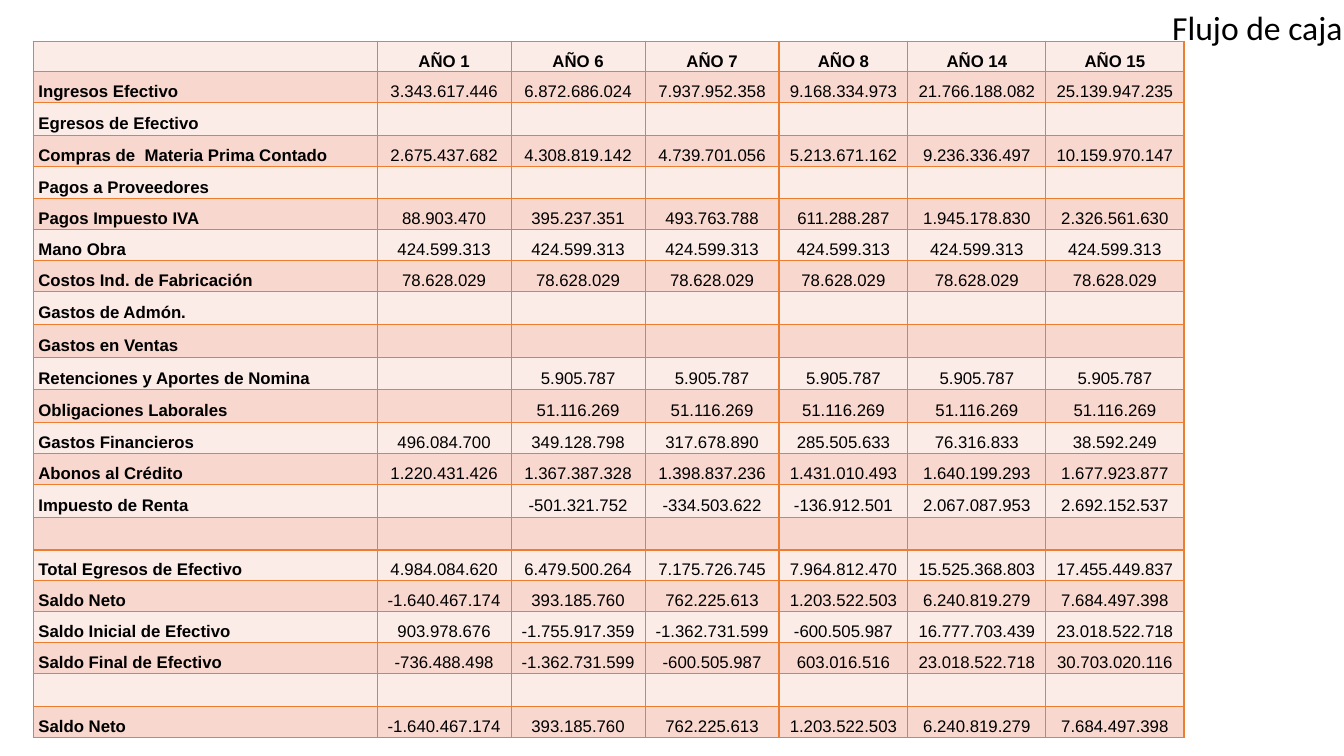
import pptx
import pptx.dml.color
import pptx.enum.text
import pptx.oxml
import pptx.oxml.ns
import pptx.util

Pt = pptx.util.Pt
ALIGN = pptx.enum.text.PP_ALIGN
MIDDLE = pptx.enum.text.MSO_ANCHOR.MIDDLE

BLACK, ORANGE = "000000", "ED7D31"
BANDS = ("FCECE8", "F8D7CE")
COLUMN_WIDTHS = (245.6, 95.7, 95.7, 95.7, 92, 98.6, 98.6)
HEADER_HEIGHT, FULL_ROW_HEIGHT, GAP_ROW_HEIGHT = 20.2, 22.1, 23.4
NO_VALUES = ("",) * 6
NET_BALANCE = ("Saldo Neto", "-1.640.467.174", "393.185.760", "762.225.613",
               "1.203.522.503", "6.240.819.279", "7.684.497.398")

CASH_FLOW = [
    ("", "AÑO 1", "AÑO 6", "AÑO 7", "AÑO 8", "AÑO 14", "AÑO 15"),
    ("Ingresos Efectivo", "3.343.617.446", "6.872.686.024", "7.937.952.358",
     "9.168.334.973", "21.766.188.082", "25.139.947.235"),
    ("Egresos de Efectivo", *NO_VALUES),
    ("Compras de  Materia Prima Contado", "2.675.437.682", "4.308.819.142", "4.739.701.056",
     "5.213.671.162", "9.236.336.497", "10.159.970.147"),
    ("Pagos a Proveedores", *NO_VALUES),
    ("Pagos Impuesto IVA", "88.903.470", "395.237.351", "493.763.788",
     "611.288.287", "1.945.178.830", "2.326.561.630"),
    ("Mano Obra", *["424.599.313"] * 6),
    ("Costos Ind. de Fabricación", *["78.628.029"] * 6),
    ("Gastos de Admón.", *NO_VALUES),
    ("Gastos en Ventas", *NO_VALUES),
    ("Retenciones y Aportes de Nomina", "", *["5.905.787"] * 5),
    ("Obligaciones Laborales", "", *["51.116.269"] * 5),
    ("Gastos Financieros", "496.084.700", "349.128.798", "317.678.890",
     "285.505.633", "76.316.833", "38.592.249"),
    ("Abonos al Crédito", "1.220.431.426", "1.367.387.328", "1.398.837.236",
     "1.431.010.493", "1.640.199.293", "1.677.923.877"),
    ("Impuesto de Renta", "", "-501.321.752", "-334.503.622",
     "-136.912.501", "2.067.087.953", "2.692.152.537"),
    ("", *NO_VALUES),
    ("Total Egresos de Efectivo", "4.984.084.620", "6.479.500.264", "7.175.726.745",
     "7.964.812.470", "15.525.368.803", "17.455.449.837"),
    NET_BALANCE,
    ("Saldo Inicial de Efectivo", "903.978.676", "-1.755.917.359", "-1.362.731.599",
     "-600.505.987", "16.777.703.439", "23.018.522.718"),
    ("Saldo Final de Efectivo", "-736.488.498", "-1.362.731.599", "-600.505.987",
     "603.016.516", "23.018.522.718", "30.703.020.116"),
    ("", *NO_VALUES),
    NET_BALANCE,
]


def color(value):
    """Return the colour for a hex string."""
    return pptx.dml.color.RGBColor.from_string(value)


def add_run(paragraph, text, font_name, size, bold=False):
    """Append a run of black text to a paragraph."""
    run = paragraph.add_run()
    run.text = text
    run.font.name = font_name
    run.font.size = Pt(size)
    run.font.bold = bold
    run.font.color.rgb = color(BLACK)


def add_title(slide, text):
    """Add the slide title at the top right."""
    title = slide.shapes.add_textbox(Pt(830.2), Pt(0), Pt(174.2), Pt(41.8))
    frame = title.text_frame
    frame.word_wrap = True
    frame.vertical_anchor = MIDDLE
    frame.paragraphs[0].line_spacing = 0.9
    add_run(frame.paragraphs[0], text, "Calibri", 24)


def set_borders(cell):
    """Draw an orange line on every side of a cell."""
    properties = cell._tc.get_or_add_tcPr()
    for position, side in enumerate(("lnL", "lnR", "lnT", "lnB")):
        line = pptx.oxml.parse_xml(
            f'<a:{side} {pptx.oxml.ns.nsdecls("a")} w="{Pt(1)}"><a:solidFill>'
            f'<a:srgbClr val="{ORANGE}"/></a:solidFill></a:{side}>')
        properties.insert(position, line)


def fill_cell(cell, text, band, is_label, bold):
    """Write one table cell with its band colour and borders."""
    cell.fill.solid()
    cell.fill.fore_color.rgb = color(band)
    set_borders(cell)
    cell.vertical_anchor = MIDDLE
    cell.margin_left = cell.margin_right = Pt(3.6)
    cell.margin_top = cell.margin_bottom = Pt(0)
    paragraph = cell.text_frame.paragraphs[0]
    if text:
        paragraph.alignment = ALIGN.JUSTIFY if is_label else ALIGN.CENTER
        paragraph.line_spacing = 1.5
        add_run(paragraph, text, "Arial", 12, bold)
    else:
        paragraph._p.get_or_add_endParaRPr().set("sz", "1200")


def add_cash_flow_table(slide):
    """Add the cash flow table, with taller rows where values are missing."""
    heights = [HEADER_HEIGHT] + [
        FULL_ROW_HEIGHT if all(row) else GAP_ROW_HEIGHT for row in CASH_FLOW[1:]]
    table = slide.shapes.add_table(
        len(CASH_FLOW), len(COLUMN_WIDTHS), Pt(23.8), Pt(29.5),
        Pt(sum(COLUMN_WIDTHS)), Pt(sum(heights))).table
    table.first_row = table.horz_banding = False
    for column, width in zip(table.columns, COLUMN_WIDTHS):
        column.width = Pt(width)
    for row_index, (texts, height) in enumerate(zip(CASH_FLOW, heights)):
        table.rows[row_index].height = Pt(height)
        for column_index, text in enumerate(texts):
            is_label = column_index == 0
            fill_cell(table.cell(row_index, column_index), text, BANDS[row_index % 2],
                      is_label, bold=is_label or row_index == 0)


def main():
    """Build the cash flow slide and save it."""
    presentation = pptx.Presentation()
    presentation.slide_width = Pt(960)
    presentation.slide_height = Pt(540)
    slide = presentation.slides.add_slide(presentation.slide_layouts[6])
    add_title(slide, "Flujo de caja")
    add_cash_flow_table(slide)
    presentation.save("out.pptx")


if __name__ == "__main__":
    main()
